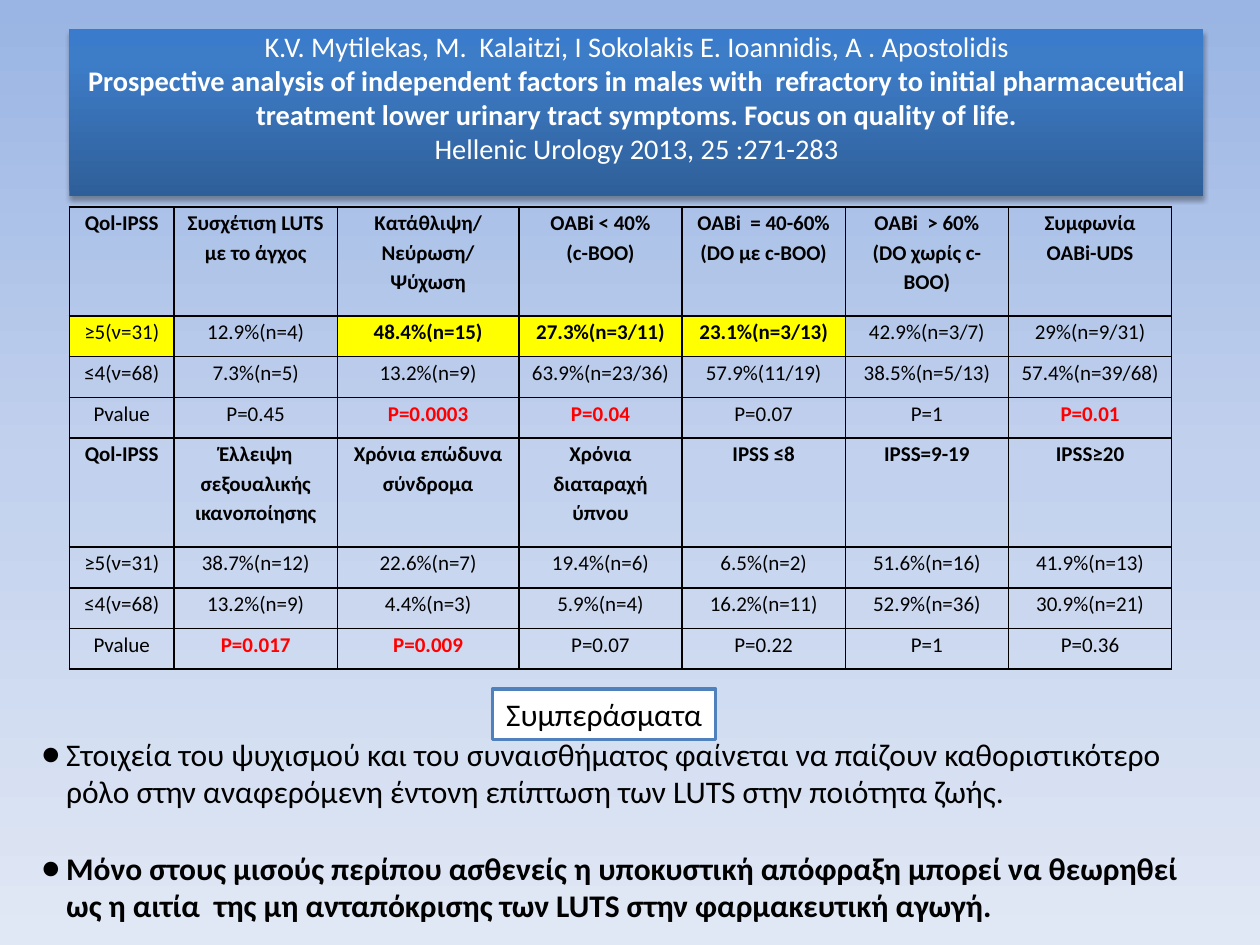
from lxml import etree
from pptx import Presentation
from pptx.dml.color import RGBColor
from pptx.enum.shapes import MSO_SHAPE
from pptx.enum.text import MSO_ANCHOR, MSO_AUTO_SIZE, PP_ALIGN
from pptx.oxml.ns import qn
from pptx.util import Cm, Pt

RECTANGLE = MSO_SHAPE.RECTANGLE
TOP, MIDDLE = MSO_ANCHOR.TOP, MSO_ANCHOR.MIDDLE
NO_AUTOFIT = MSO_AUTO_SIZE.NONE
LEFT, CENTER = PP_ALIGN.LEFT, PP_ALIGN.CENTER
BLACK, WHITE, RED, YELLOW, BLUE = "000000", "FFFFFF", "FF0000", "FFFF00", "4F81BD"
rgb = RGBColor.from_string


def write(frame, text, size=18, color=BLACK, bold=False, align=LEFT, spacing=1.0, before=0):
    """Add one paragraph per line of text, filling the empty first one; return the last."""
    for line in text.split("\n"):
        paragraph = frame.paragraphs[0]
        if paragraph.runs:
            paragraph = frame.add_paragraph()
        paragraph.alignment = align
        paragraph.line_spacing = spacing
        paragraph.space_before = Pt(before)
        run = paragraph.add_run()
        run.text = line
        run.font.name = "Calibri"
        run.font.size = Pt(size)
        run.font.bold = bold
        run.font.color.rgb = rgb(color)
    return paragraph


def set_gradient(fill, owner, stops, clockwise_angle):
    """Fill with (percent, colour) stops; owner is the element that holds the fill."""
    fill.gradient()
    fill.gradient_angle = 360 - clockwise_angle
    stop_list = next(owner.iter(qn("a:gsLst")))
    for old_stop in list(stop_list):
        stop_list.remove(old_stop)
    for percent, color in stops:
        stop = etree.SubElement(stop_list, qn("a:gs"), pos=str(percent * 1000))
        etree.SubElement(stop, qn("a:srgbClr"), val=color)


presentation = Presentation()
presentation.slide_width, presentation.slide_height = Cm(25.4), Cm(19.05)
slide = presentation.slides.add_slide(presentation.slide_layouts[1])
set_gradient(slide.background.fill, slide._element,
             [(0, "9AB5E4"), (50, "C2D1ED"), (100, "E1E8F5")], 90)

# Title banner with the citation
citation = slide.shapes.title
citation.left, citation.top, citation.width, citation.height = Cm(1.4), Cm(0.58), Cm(22.86), Cm(3.38)
set_gradient(citation.fill, citation._element.spPr,
             [(0, "2F5F99"), (80, "3D7CC7"), (100, "3A7CCB")], 270)
effects = etree.SubElement(citation._element.spPr, qn("a:effectLst"))
shadow = etree.SubElement(effects, qn("a:outerShdw"), blurRad=str(Pt(3.1)), dist=str(Pt(1.8)),
                          dir="5400000", rotWithShape="0")
shadow_color = etree.SubElement(shadow, qn("a:srgbClr"), val=BLACK)
etree.SubElement(shadow_color, qn("a:alpha"), val="35000")
citation_frame = citation.text_frame
citation_frame.auto_size = NO_AUTOFIT
citation_frame.vertical_anchor = TOP
citation_frame.margin_top = 0
for line, bold in [
    ("K.V. Mytilekas, M.  Kalaitzi, Ι Sokolakis E. Ioannidis, A . Apostolidis", False),
    ("Prospective analysis of independent factors in males with  refractory to initial "
     "pharmaceutical treatment lower urinary tract symptoms. Focus on quality of life.", True),
    ("Hellenic Urology 2013, 25 :271-283", False),
]:
    write(citation_frame, line, size=16.2, color=WHITE, bold=bold, align=CENTER)

# Results by quality of life
results = [
    ["Qol-IPSS", "Συσχέτιση LUTS με το άγχος", "Κατάθλιψη/\nΝεύρωση/\nΨύχωση", "OABi < 40%\n(c-BOO)",
     "OABi  = 40-60%\n(DO με c-BOO)", "OABi  > 60%\n(DO χωρίς c-BOO)", "Συμφωνία\nOABi-UDS"],
    ["≥5(ν=31)", "12.9%(n=4)", "48.4%(n=15)", "27.3%(n=3/11)", "23.1%(n=3/13)", "42.9%(n=3/7)",
     "29%(n=9/31)"],
    ["≤4(ν=68)", "7.3%(n=5)", "13.2%(n=9)", "63.9%(n=23/36)", "57.9%(11/19)", "38.5%(n=5/13)",
     "57.4%(n=39/68)"],
    ["Pvalue", "P=0.45", "P=0.0003", "P=0.04", "P=0.07", "P=1", "P=0.01"],
    ["Qol-IPSS", "Έλλειψη σεξουαλικής\nικανοποίησης", "Χρόνια επώδυνα σύνδρομα",
     "Χρόνια διαταραχή ύπνου", "IPSS ≤8", "IPSS=9-19", "IPSS≥20"],
    ["≥5(ν=31)", "38.7%(n=12)", "22.6%(n=7)", "19.4%(n=6)", "6.5%(n=2)", "51.6%(n=16)",
     "41.9%(n=13)"],
    ["≤4(ν=68)", "13.2%(n=9)", "4.4%(n=3)", "5.9%(n=4)", "16.2%(n=11)", "52.9%(n=36)",
     "30.9%(n=21)"],
    ["Pvalue", "P=0.017", "P=0.009", "P=0.07", "P=0.22", "P=1", "P=0.36"],
]
highlighted = {(1, 0), (1, 2), (1, 3), (1, 4)}
column_widths = [2.11, 3.29, 3.66, 3.29, 3.29, 3.29, 3.29]
table = slide.shapes.add_table(len(results), len(column_widths),
                               Cm(1.4), Cm(4.17), Cm(22.22), Cm(9.32)).table
table.first_row = table.horz_banding = False
for column, width in zip(table.columns, column_widths):
    column.width = Cm(width)

for r, row in enumerate(results):
    is_header = row[0] == "Qol-IPSS"
    table.rows[r].height = Cm(2.2 if is_header else 0.82)
    for c, text in enumerate(row):
        cell = table.cell(r, c)
        cell.margin_left = cell.margin_right = Cm(0.17)
        cell.margin_top = cell.margin_bottom = 0
        for side in ("a:lnL", "a:lnR", "a:lnT", "a:lnB"):
            border = etree.SubElement(cell._tc.get_or_add_tcPr(), qn(side), w=str(Pt(1)))
            border_fill = etree.SubElement(border, qn("a:solidFill"))
            etree.SubElement(border_fill, qn("a:srgbClr"), val=BLACK)
        is_highlighted = (r, c) in highlighted
        if is_highlighted:
            cell.fill.solid()
            cell.fill.fore_color.rgb = rgb(YELLOW)
        else:
            cell.fill.background()
        is_significant = text.startswith("P=") and float(text[2:]) < 0.05
        write(cell.text_frame, text, size=12, color=RED if is_significant else BLACK,
              bold=is_header or is_significant or (is_highlighted and c > 0),
              align=CENTER, spacing=1.15)

# Conclusions
conclusions = slide.placeholders[1]
conclusions.left, conclusions.top, conclusions.width, conclusions.height = (
    Cm(0.58), Cm(14.68), Cm(23.83), Cm(4.11))
conclusions.text_frame.auto_size = NO_AUTOFIT
for text, bold, before in [
    ("Στοιχεία του ψυχισμού και του συναισθήματος φαίνεται να παίζουν καθοριστικότερο ρόλο στην "
     "αναφερόμενη έντονη επίπτωση των LUTS στην ποιότητα ζωής.", False, 0),
    ("Μόνο στους μισούς περίπου ασθενείς η υποκυστική απόφραξη μπορεί να θεωρηθεί ως η αιτία  της "
     "μη ανταπόκρισης των LUTS στην φαρμακευτική αγωγή.", True, 22),
]:
    properties = write(conclusions.text_frame, text, bold=bold, before=before)._p.get_or_add_pPr()
    properties.set("marL", str(Cm(0.5)))
    properties.set("indent", str(-Cm(0.5)))
    etree.SubElement(properties, qn("a:buFont"), typeface="Calibri")
    etree.SubElement(properties, qn("a:buChar"), char="●")

conclusions_label = slide.shapes.add_shape(RECTANGLE, Cm(9.93), Cm(13.89), Cm(4.5), Cm(1.02))
conclusions_label.shadow.inherit = False
conclusions_label.fill.solid()
conclusions_label.fill.fore_color.rgb = rgb(WHITE)
conclusions_label.line.color.rgb = rgb(BLUE)
conclusions_label.line.width = Pt(2)
conclusions_label.text_frame.word_wrap = False
conclusions_label.text_frame.vertical_anchor = MIDDLE
write(conclusions_label.text_frame, "Συμπεράσματα", align=CENTER)

presentation.save("out.pptx")
